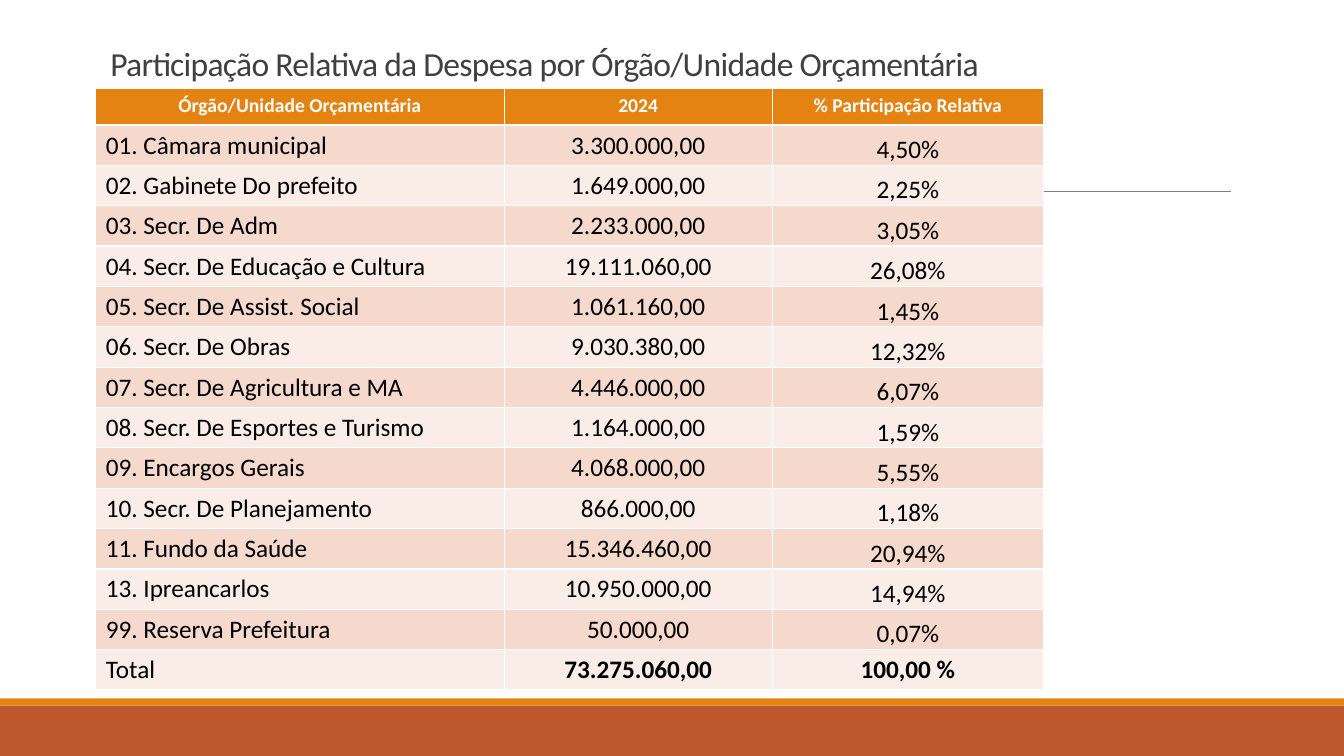
from typing import NamedTuple

from lxml import etree
from pptx import Presentation
from pptx.dml.color import RGBColor
from pptx.enum.shapes import MSO_CONNECTOR, MSO_SHAPE
from pptx.enum.text import MSO_ANCHOR as ANCHOR, PP_ALIGN as ALIGN
from pptx.oxml.ns import qn
from pptx.util import Inches, Pt

FONT = "Calibri"
WHITE = RGBColor(0xFF, 0xFF, 0xFF)
BLACK = RGBColor(0x00, 0x00, 0x00)
GRAY = RGBColor(0x80, 0x80, 0x80)
TITLE_GRAY = RGBColor(0x40, 0x40, 0x40)
ORANGE = RGBColor(0xE4, 0x83, 0x12)
RUST = RGBColor(0xBD, 0x58, 0x2C)
BAND_DARK = RGBColor(0xF5, 0xD9, 0xCC)
BAND_LIGHT = RGBColor(0xFA, 0xED, 0xE7)


class Bar(NamedTuple):
    top: float
    height: float
    color: RGBColor


class Expense(NamedTuple):
    unit: str
    amount: str
    share: str


BARS = [Bar(7, 0.5, RUST), Bar(6.93, 0.07, ORANGE)]
COL_WIDTHS = [4.05, 2.66, 2.69]
HEADER_HEIGHT, ROW_HEIGHT = 0.36, 0.4
HEADER = Expense("Órgão/Unidade Orçamentária", "2024", "% Participação Relativa")
EXPENSES = [
    Expense("01. Câmara municipal", "3.300.000,00", "4,50%"),
    Expense("02. Gabinete Do prefeito", "1.649.000,00", "2,25%"),
    Expense("03. Secr. De Adm", "2.233.000,00", "3,05%"),
    Expense("04. Secr. De Educação e Cultura", "19.111.060,00", "26,08%"),
    Expense("05. Secr. De Assist. Social", "1.061.160,00", "1,45%"),
    Expense("06. Secr. De Obras", "9.030.380,00", "12,32%"),
    Expense("07. Secr. De Agricultura e MA", "4.446.000,00", "6,07%"),
    Expense("08. Secr. De Esportes e Turismo", "1.164.000,00", "1,59%"),
    Expense("09. Encargos Gerais", "4.068.000,00", "5,55%"),
    Expense("10. Secr. De Planejamento", "866.000,00", "1,18%"),
    Expense("11. Fundo da Saúde", "15.346.460,00", "20,94%"),
    Expense("13. Ipreancarlos", "10.950.000,00", "14,94%"),
    Expense("99. Reserva Prefeitura", "50.000,00", "0,07%"),
]
TOTAL = Expense("Total", "73.275.060,00", "100,00 %")


def write(tf, text: str, *, size: float, color: RGBColor, bold: bool = False,
          align=ALIGN.CENTER, line_spacing: float | None = None,
          char_spacing: float = 0) -> None:
    p = tf.paragraphs[0]
    p.alignment = align
    p.line_spacing = line_spacing
    r = p.add_run()
    r.text = text
    r.font.name, r.font.size, r.font.bold = FONT, Pt(size), bold
    r.font.color.rgb = color
    if char_spacing:
        r._r.get_or_add_rPr().set("spc", str(round(char_spacing * 100)))


def add_bar(s, bar: Bar) -> None:
    sp = s.shapes.add_shape(MSO_SHAPE.RECTANGLE, 0, Inches(bar.top),
                            Inches(13.33), Inches(bar.height))
    sp.shadow.inherit = False
    sp.fill.solid()
    sp.fill.fore_color.rgb = bar.color
    sp.line.fill.background()


def add_rule(s) -> None:
    """Draw the thin line that runs behind the table."""
    cx = s.shapes.add_connector(MSO_CONNECTOR.STRAIGHT, Inches(1.31), Inches(1.9),
                                Inches(12.21), Inches(1.9))
    cx.line.color.rgb = GRAY
    cx.line.width = Pt(0.5)
    etree.SubElement(cx._element.spPr, qn("a:effectLst"))


def add_title(s) -> None:
    tf = s.shapes.add_textbox(Inches(0.7), 0, Inches(9.4), Inches(0.88)).text_frame
    tf.word_wrap = True
    tf.vertical_anchor = ANCHOR.BOTTOM
    write(tf, "Participação Relativa da Despesa por Órgão/Unidade Orçamentária",
          size=24, color=TITLE_GRAY, line_spacing=0.85, char_spacing=-0.5)


def add_expense_table(s) -> None:
    rows = [HEADER, *EXPENSES, TOTAL]
    height = HEADER_HEIGHT + ROW_HEIGHT * (len(rows) - 1)
    table = s.shapes.add_table(len(rows), len(COL_WIDTHS), Inches(0.95), Inches(0.88),
                               Inches(sum(COL_WIDTHS)), Inches(height)).table
    for col, width in zip(table.columns, COL_WIDTHS):
        col.width = Inches(width)
    for i, row in enumerate(rows):
        is_header, is_total = row is HEADER, row is TOTAL
        table.rows[i].height = Inches(HEADER_HEIGHT if is_header else ROW_HEIGHT)
        band = BAND_DARK if i % 2 else BAND_LIGHT
        for j, text in enumerate(row):
            cell = table.cell(i, j)
            cell.fill.solid()
            cell.fill.fore_color.rgb = ORANGE if is_header else band
            write(cell.text_frame, text, size=14 if is_header else 18,
                  color=WHITE if is_header else BLACK,
                  bold=is_header or (is_total and j > 0),
                  align=ALIGN.CENTER if is_header or j else ALIGN.LEFT)
            if j == 2 and not (is_header or is_total):
                cell.vertical_anchor = ANCHOR.BOTTOM
                cell.margin_left = cell.margin_right = cell.margin_top = Inches(0.01)
                cell.margin_bottom = 0


def main() -> None:
    prs = Presentation()
    prs.slide_width, prs.slide_height = Inches(13.33), Inches(7.5)
    s = prs.slides.add_slide(prs.slide_layouts[6])
    for bar in BARS:
        add_bar(s, bar)
    add_rule(s)
    add_title(s)
    add_expense_table(s)
    prs.save("out.pptx")


if __name__ == "__main__":
    main()
